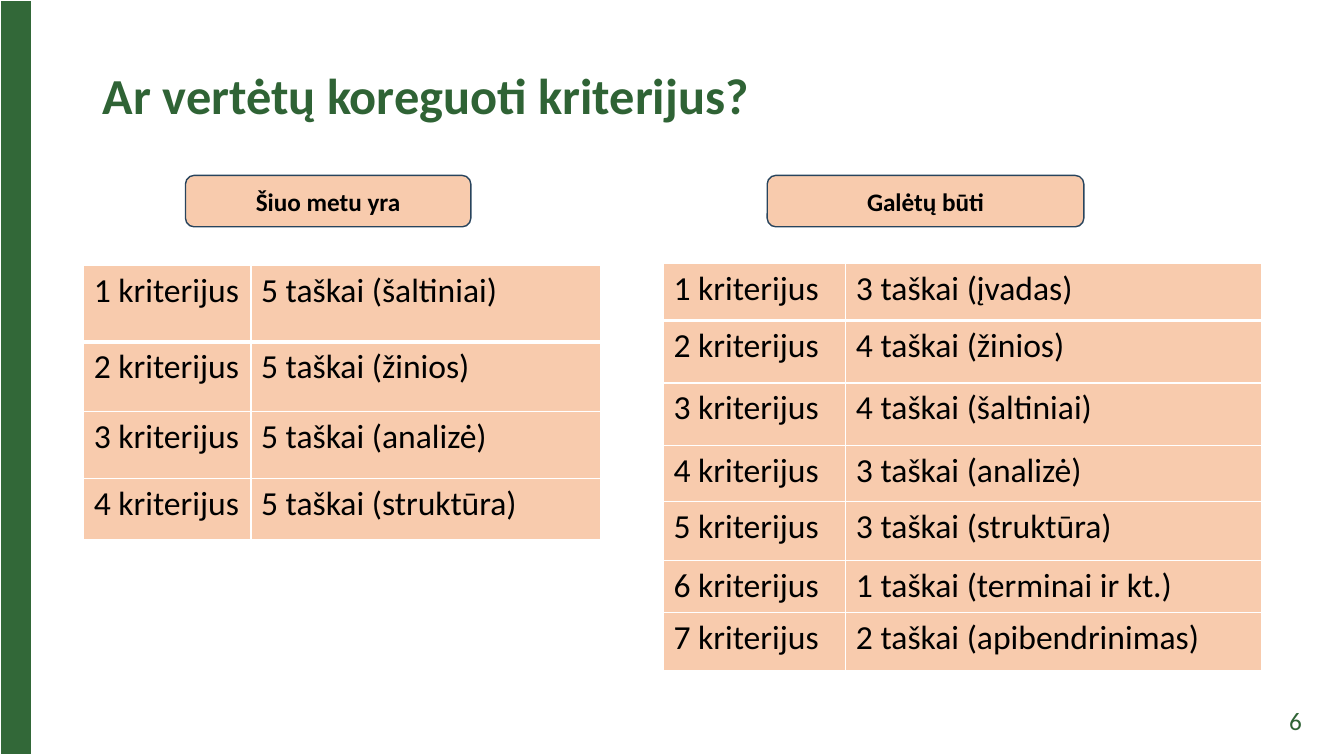
import dataclasses

import lxml.etree
import pptx
import pptx.dml.color
import pptx.enum.shapes
import pptx.enum.text
import pptx.oxml.ns
import pptx.util

Inches = pptx.util.Inches
Pt = pptx.util.Pt
qn = pptx.oxml.ns.qn
ALIGN = pptx.enum.text.PP_ALIGN
MIDDLE = pptx.enum.text.MSO_ANCHOR.MIDDLE


@dataclasses.dataclass(frozen=True)
class Theme:
    font: str = "Calibri"
    band: str = "326838"
    green: str = "2F6335"
    peach: str = "F8CBAD"
    outline: str = "28445D"
    black: str = "000000"
    white: str = "FFFFFF"
    title_size: int = 36
    table_size: int = 24
    label_size: int = 18


THEME = Theme()
FIRST_ROW_BORDERS = {"lnL": 1, "lnR": 1, "lnT": 1, "lnB": 3}

CURRENT_CRITERIA = ["5 taškai (šaltiniai)", "5 taškai (žinios)",
                    "5 taškai (analizė)", "5 taškai (struktūra)"]
PROPOSED_CRITERIA = ["3 taškai (įvadas)", "4 taškai (žinios)",
                     "4 taškai (šaltiniai)", "3 taškai (analizė)",
                     "3 taškai (struktūra)", "1 taškai (terminai ir kt.)",
                     "2 taškai (apibendrinimas)"]


def rgb(color):
    return pptx.dml.color.RGBColor.from_string(color)


def write(tf, text, size, color, bold=False, align=ALIGN.LEFT):
    tf.text = text
    p = tf.paragraphs[0]
    p.alignment = align
    font = p.runs[0].font
    font.name = THEME.font
    font.size = Pt(size)
    font.bold = bold
    font.color.rgb = rgb(color)


def set_title(s, text):
    sp = s.shapes.title
    sp.left, sp.top = Inches(0.92), Inches(0.4)
    sp.width, sp.height = Inches(11.5), Inches(1.15)
    tf = sp.text_frame
    tf.vertical_anchor = MIDDLE
    write(tf, text, THEME.title_size, THEME.green, bold=True)
    tf.paragraphs[0].line_spacing = 0.9


def add_label(s, text, left, width):
    sp = s.shapes.add_shape(pptx.enum.shapes.MSO_SHAPE.ROUNDED_RECTANGLE,
                            Inches(left), Inches(1.74),
                            Inches(width), Inches(0.51))
    sp.shadow.inherit = False
    sp.fill.solid()
    sp.fill.fore_color.rgb = rgb(THEME.peach)
    sp.line.color.rgb = rgb(THEME.outline)
    sp.line.width = Pt(1)
    sp.text_frame.vertical_anchor = MIDDLE
    write(sp.text_frame, text, THEME.label_size, THEME.black, True, ALIGN.CENTER)


def add_borders(cell, widths):
    """Draw white borders; line elements must come before the fill."""
    tc_pr = cell._tc.get_or_add_tcPr()
    for position, (tag, width) in enumerate(widths.items()):
        ln = lxml.etree.Element(qn(f"a:{tag}"), w=str(Pt(width)))
        fill = lxml.etree.SubElement(ln, qn("a:solidFill"))
        lxml.etree.SubElement(fill, qn("a:srgbClr"), val=THEME.white)
        tc_pr.insert(position, ln)


def add_filled_table(s, left, top, col_widths, row_heights, fill):
    """Add a table in one colour; rows below the first take the style's borders."""
    table = s.shapes.add_table(len(row_heights), len(col_widths),
                               Inches(left), Inches(top),
                               Inches(sum(col_widths)),
                               Inches(sum(row_heights))).table
    for col, width in zip(table.columns, col_widths):
        col.width = Inches(width)
    for row, height in zip(table.rows, row_heights):
        row.height = Inches(height)
    for cell in table.iter_cells():
        cell.fill.solid()
        cell.fill.fore_color.rgb = rgb(fill)
    for cell in table.rows[0].cells:
        add_borders(cell, FIRST_ROW_BORDERS)
    return table


def add_criteria_table(s, scores, left, top, col_widths, row_heights):
    """Number the criteria and list the score of each."""
    table = add_filled_table(s, left, top, col_widths, row_heights, THEME.peach)
    for number, (row, score) in enumerate(zip(table.rows, scores), 1):
        for cell, text in zip(row.cells, (f"{number} kriterijus", score)):
            write(cell.text_frame, text, THEME.table_size, THEME.black)


def add_page_number(s, text):
    sp = s.shapes.add_textbox(Inches(10.01), Inches(6.95), Inches(3), Inches(0.4))
    tf = sp.text_frame
    tf.word_wrap = True
    tf.vertical_anchor = MIDDLE
    write(tf, text, THEME.label_size, THEME.green, align=ALIGN.RIGHT)


def main():
    prs = pptx.Presentation()
    prs.slide_width, prs.slide_height = Inches(13.33), Inches(7.5)
    s = prs.slides.add_slide(prs.slide_layouts[5])

    add_filled_table(s, 0, 0, [0.31], [7.5], THEME.band)
    set_title(s, "Ar vertėtų koreguoti kriterijus?")
    add_criteria_table(s, CURRENT_CRITERIA, 0.83, 2.63, [1.66, 3.47],
                       [0.76, 0.69, 0.67, 0.6])
    add_page_number(s, "6")
    add_criteria_table(s, PROPOSED_CRITERIA, 6.58, 2.61, [1.81, 4.12],
                       [0.57, 0.62, 0.62, 0.56, 0.58, 0.52, 0.57])
    add_label(s, "Šiuo metu yra", 1.84, 2.83)
    add_label(s, "Galėtų būti", 7.61, 3.14)

    prs.save("out.pptx")


if __name__ == "__main__":
    main()
